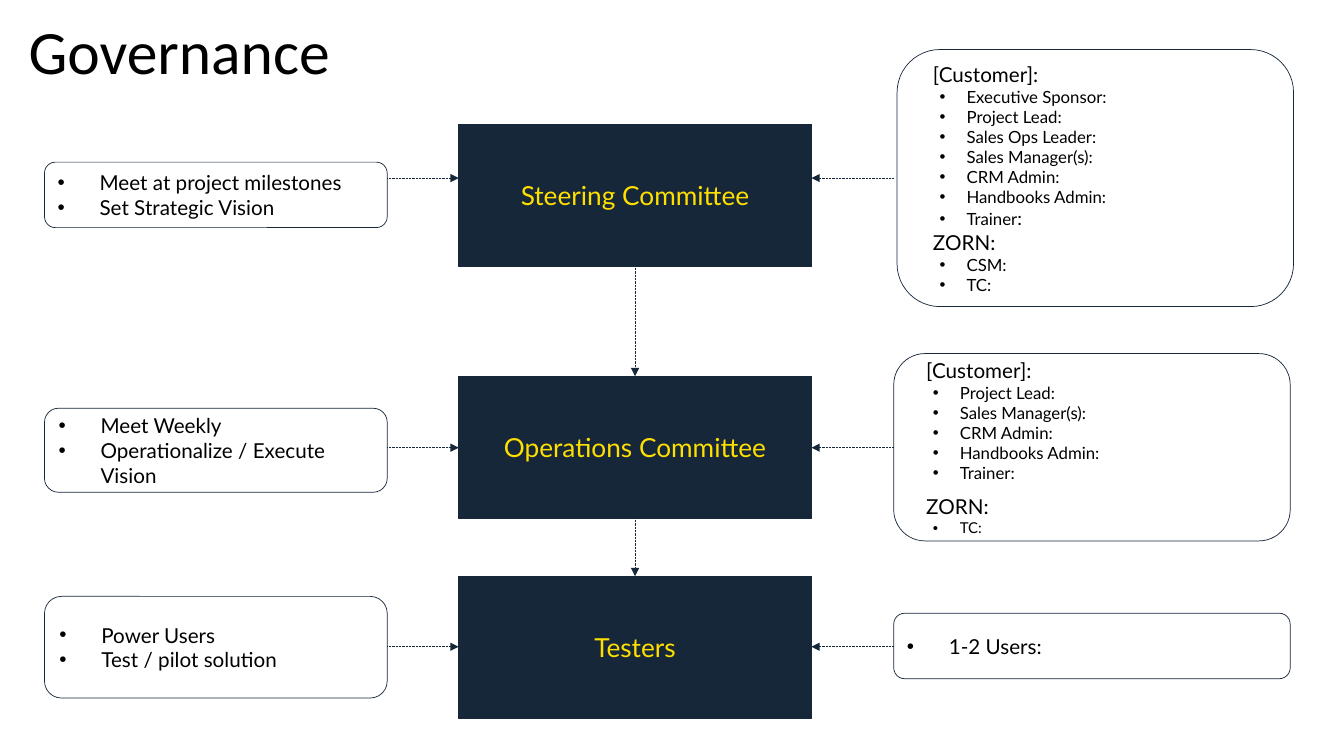
from dataclasses import dataclass

from lxml import etree
from pptx import Presentation, util as u
from pptx.dml.color import RGBColor
from pptx.enum import dml, shapes, text
from pptx.oxml import ns


@dataclass(frozen=True)
class Theme:
    navy: str = "162739"
    yellow: str = "FFDF00"
    white: str = "FFFFFF"
    black: str = "000000"
    title_font: str = "Calibri"
    body_font: str = "Lato"
    title: float = 44
    committee: float = 18.7
    body: float = 14.7
    role: float = 12
    line: float = 0.5


@dataclass(frozen=True)
class Entry:
    words: str
    size: float
    margin: float
    hanging: float = 0
    space_before: float = 0
    tail: str = ""
    tail_size: float = 0


class GovernanceSlide:
    COLUMNS, ROWS = 160, 90

    def __init__(self, deck, theme):
        self.theme = theme
        self.slide = deck.slides.add_slide(deck.slide_layouts[6])
        self.column = deck.slide_width / self.COLUMNS
        self.row = deck.slide_height / self.ROWS

    def frame(self, left, top, width, height):
        return [round(left * self.column), round(top * self.row),
                round(width * self.column), round(height * self.row)]

    def style(self, run, size, color, font):
        run.font.size = u.Pt(size)
        run.font.name = font
        run.font.color.rgb = RGBColor.from_string(color)

    def title(self, words, *place):
        heading = self.slide.shapes.add_textbox(*self.frame(*place)).text_frame
        heading.word_wrap = True
        heading.margin_left = heading.margin_right = 0
        heading.margin_top = heading.margin_bottom = 0
        heading.text = words
        paragraph = heading.paragraphs[0]
        paragraph.line_spacing = 0.9
        self.style(paragraph.runs[0], self.theme.title, self.theme.black,
                   self.theme.title_font)

    def box(self, preset, fill, *place):
        box = self.slide.shapes.add_shape(preset, *self.frame(*place))
        box.shadow.inherit = False
        box.fill.solid()
        box.fill.fore_color.rgb = RGBColor.from_string(fill)
        box.line.color.rgb = RGBColor.from_string(self.theme.navy)
        box.line.width = u.Pt(self.theme.line)
        box.text_frame.word_wrap = True
        box.text_frame.vertical_anchor = text.MSO_ANCHOR.MIDDLE
        return box.text_frame

    def committee(self, name, *place):
        label = self.box(shapes.MSO_SHAPE.RECTANGLE, self.theme.navy, *place)
        label.text = name
        label.paragraphs[0].alignment = text.PP_ALIGN.CENTER
        self.style(label.paragraphs[0].runs[0], self.theme.committee,
                   self.theme.yellow, self.theme.body_font)

    def card(self, entries, *place):
        body = self.box(shapes.MSO_SHAPE.ROUNDED_RECTANGLE, self.theme.white, *place)
        body.text = "\n".join(entry.words for entry in entries)
        for paragraph, entry in zip(body.paragraphs, entries):
            paragraph.alignment = text.PP_ALIGN.LEFT
            paragraph.space_before = u.Pt(entry.space_before)
            self.indent(paragraph, entry)
            self.style(paragraph.runs[0], entry.size, self.theme.black,
                       self.theme.body_font)
            if entry.tail:
                ending = paragraph.add_run()
                ending.text = entry.tail
                self.style(ending, entry.tail_size, self.theme.black,
                           self.theme.body_font)

    def indent(self, paragraph, entry):
        properties = paragraph._p.get_or_add_pPr()
        properties.set("marL", str(round(entry.margin * self.column)))
        properties.set("indent", str(round(-entry.hanging * self.column)))
        if entry.hanging:
            etree.SubElement(properties, ns.qn("a:buFont")).set("typeface", "Arial")
            etree.SubElement(properties, ns.qn("a:buChar")).set("char", "•")

    def arrow(self, x1, y1, x2, y2):
        arrow = self.slide.shapes.add_connector(
            shapes.MSO_CONNECTOR.STRAIGHT,
            *self.frame(x1, y1, x2, y2))
        arrow.line.color.rgb = RGBColor.from_string(self.theme.navy)
        arrow.line.width = u.Pt(self.theme.line)
        arrow.line.dash_style = dml.MSO_LINE.ROUND_DOT
        outline = arrow.line._get_or_add_ln()
        etree.SubElement(outline, ns.qn("a:tailEnd")).set("type", "triangle")
        etree.SubElement(arrow._element.spPr, ns.qn("a:effectLst"))


def duties(*lines):
    return [Entry(line, Theme.body, 5, 5) for line in lines]


def party(name, space_before=0):
    return Entry(name, Theme.body, 1.6, space_before=space_before)


def roles(*names, size=Theme.role):
    return [Entry(name, size, 5.6, 3.2) for name in names]


def main():
    deck = Presentation()
    deck.slide_width, deck.slide_height = u.Inches(13.33), u.Inches(7.5)
    page = GovernanceSlide(deck, Theme())
    page.title("Governance", 3.4, 2.5, 153.4, 9.6)

    left, left_width = 5.3, 40.8
    middle, middle_width, middle_height = 54.6, 42, 16.9
    right, right_width = 106.4, 47.2
    shared_roles = ["CRM Admin:", "Handbooks Admin:"]

    steering_members = [
        party("[Customer]:"),
        *roles("Executive Sponsor:", "Project Lead:", "Sales Ops Leader:",
               "Sales Manager(s):", *shared_roles),
        Entry("Trainer", Theme.role, 5.6, 3.2, tail=":", tail_size=13.3),
        party("ZORN:"),
        *roles("CSM:", "TC:"),
    ]
    operations_members = [
        party("[Customer]:"),
        *roles("Project Lead:", "Sales Manager(s):", *shared_roles, "Trainer:"),
        party("ZORN:", space_before=8),
        *roles("TC:", size=10.7),
    ]
    tiers = [
        ("Steering Committee", 14.8, 21.2,
         duties("Meet at project milestones", "Set Strategic Vision"), 19.3, 7.8,
         steering_members, right + 0.4, 5.9, 30.6),
        ("Operations Committee", 44.8, 53.3,
         duties("Meet Weekly", "Operationalize / Execute Vision"), 48.6, 10,
         operations_members, right, 42.1, 22.3),
        ("Testers", 68.6, 77,
         duties("Power Users", "Test / pilot solution"), 71, 12.1,
         duties("1-2 Users:"), right, 73, 7.8),
    ]
    for (name, top, arrow_row, tasks, tasks_top, tasks_height,
         members, members_left, members_top, members_height) in tiers:
        page.committee(name, middle, top, middle_width, middle_height)
        page.card(tasks, left, tasks_top, left_width, tasks_height)
        page.card(members, members_left, members_top, right_width, members_height)
        page.arrow(left + left_width, arrow_row, middle, arrow_row)
        page.arrow(right, arrow_row, middle + middle_width, arrow_row)

    center = middle + middle_width / 2
    for upper, lower in zip(tiers, tiers[1:]):
        page.arrow(center, upper[1] + middle_height, center, lower[1])

    deck.save("out.pptx")


if __name__ == "__main__":
    main()
